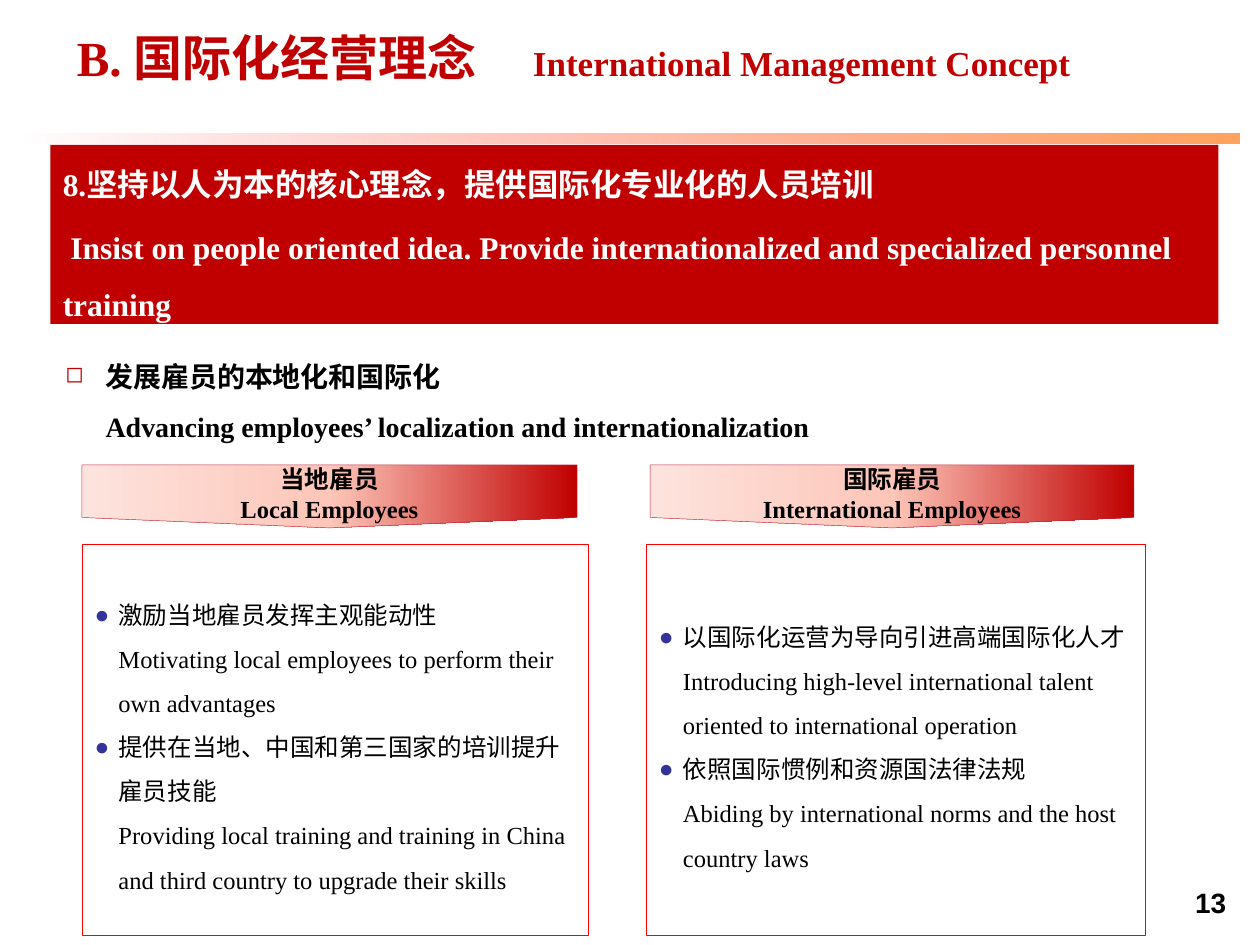
from lxml.etree import SubElement
from pptx import Presentation
from pptx.dml.color import RGBColor
from pptx.enum.shapes import MSO_SHAPE as Shape
from pptx.enum.text import MSO_ANCHOR as Anchor, MSO_AUTO_SIZE as AutoSize, PP_ALIGN as Align
from pptx.oxml.ns import qn
from pptx.util import Inches, Pt

RED = RGBColor(0xC0, 0x00, 0x00)
BORDER_RED = RGBColor(0xFF, 0x00, 0x00)
ARROW_LINE = RGBColor(0xBB, 0x27, 0x40)
PINK = RGBColor(0xFD, 0xC6, 0xB9)
PALE_PINK = RGBColor(0xFD, 0xE3, 0xDD)
ORANGE = RGBColor(0xFF, 0x75, 0x0D)
BULLET_BLUE = RGBColor(0x33, 0x33, 0x99)
WHITE = RGBColor(0xFF, 0xFF, 0xFF)
BLACK = RGBColor(0x00, 0x00, 0x00)
SERIF = "Times New Roman"

TITLE = ("B. 国际化经营理念", "International Management Concept")
BANNER = [
    "8.坚持以人为本的核心理念，提供国际化专业化的人员培训",
    "Insist on people oriented idea. Provide internationalized and specialized personnel training",
]
INTRO = ("发展雇员的本地化和国际化", "Advancing employees’ localization and internationalization")
# Each column: header, (left, width) of arrow and of box, bullets as (Chinese, English)
COLUMNS = [
    (("当地雇员", "Local Employees"), (0.65, 3.93), (0.65, 4.02), [
        ("激励当地雇员发挥主观能动性",
         "Motivating local employees to perform their own advantages"),
        ("提供在当地、中国和第三国家的培训提升雇员技能",
         "Providing local training and training in China and third country to upgrade their skills"),
    ]),
    (("国际雇员", "International Employees"), (5.16, 3.84), (5.13, 3.96), [
        ("以国际化运营为导向引进高端国际化人才",
         "Introducing high-level international talent oriented to international operation"),
        ("依照国际惯例和资源国法律法规",
         "Abiding by international norms and the host country laws"),
    ]),
]
ARROW_TOP, ARROW_HEIGHT = 3.69, 0.5
BOX_TOP, BOX_HEIGHT = 4.32, 3.1


def place(shape, left, top, width, height):
    shape.left, shape.top = Inches(left), Inches(top)
    shape.width, shape.height = Inches(width), Inches(height)


def add_shape(slide, kind, left, top, width, height):
    shape = slide.shapes.add_shape(kind, *map(Inches, (left, top, width, height)))
    shape.shadow.inherit = False
    shape.line.fill.background()
    return shape


def fill_gradient(shape, stops, angle):
    """Fill with (position %, colour, opacity %) stops; angle is clockwise."""
    shape.fill.gradient()
    gradient = shape._element.spPr.find(qn("a:gradFill"))
    stop_list = gradient.find(qn("a:gsLst"))
    for old_stop in list(stop_list):
        stop_list.remove(old_stop)
    for position, color, opacity in stops:
        stop = SubElement(stop_list, qn("a:gs"), pos=str(position * 1000))
        color_element = SubElement(stop, qn("a:srgbClr"), val=str(color))
        if opacity < 100:
            SubElement(color_element, qn("a:alpha"), val=str(opacity * 1000))
    gradient.find(qn("a:lin")).set("ang", str(angle * 60000))


def set_indent(paragraph, margin, first_line, bullet=None, color=None, percent=100):
    properties = paragraph._p.get_or_add_pPr()
    properties.set("marL", str(Inches(margin)))
    properties.set("indent", str(Inches(first_line)))
    if bullet is None:
        SubElement(properties, qn("a:buNone"))
        return
    bullet_color = SubElement(properties, qn("a:buClr"))
    SubElement(bullet_color, qn("a:srgbClr"), val=str(color))
    SubElement(properties, qn("a:buSzPct"), val=str(percent * 1000))
    SubElement(properties, qn("a:buChar"), char=bullet)


def format_paragraph(paragraph, size, color=BLACK, bold=True, name=SERIF,
                     align=Align.LEFT, spacing=1, before=0):
    paragraph.alignment = align
    paragraph.line_spacing = spacing
    paragraph.space_before = Pt(before)
    font = paragraph.font
    font.size, font.bold, font.name = Pt(size), bold, name
    font.color.rgb = color


def write_lines(frame, lines):
    """Write one paragraph per line and return the paragraphs."""
    frame.word_wrap = True
    frame.auto_size = AutoSize.NONE
    frame.text = "\n".join(lines)
    return frame.paragraphs


def write_bilingual_list(frame, pairs, margin, bullet, color, size, bold, percent=100):
    paragraphs = write_lines(frame, [line for pair in pairs for line in pair])
    for index, paragraph in enumerate(paragraphs):
        if index % 2 == 0:
            set_indent(paragraph, margin, -margin, bullet, color, percent)
        else:
            set_indent(paragraph, margin, 0)
        format_paragraph(paragraph, size, bold=bold, spacing=1.5)


def add_text_box(slide, left, top, width, height):
    return slide.shapes.add_textbox(*map(Inches, (left, top, width, height))).text_frame


def add_header_arrow(slide, lines, left, width):
    # The pentagon is turned to point down, so its own width is the visible height.
    center_x, center_y = left + width / 2, ARROW_TOP + ARROW_HEIGHT / 2
    arrow = add_shape(slide, Shape.PENTAGON, center_x - ARROW_HEIGHT / 2,
                      center_y - width / 2, ARROW_HEIGHT, width)
    arrow.rotation = 90
    arrow.adjustments[0] = 0.166
    fill_gradient(arrow, [(0, RED, 100), (50, PINK, 100), (100, PALE_PINK, 100)], 90)
    arrow.line.color.rgb, arrow.line.width = ARROW_LINE, Pt(0.25)
    frame = arrow.text_frame
    for paragraph in write_lines(frame, lines):
        format_paragraph(paragraph, 14, align=Align.CENTER)
    frame.vertical_anchor = Anchor.MIDDLE
    frame.margin_left = frame.margin_right = frame.margin_top = frame.margin_bottom = 0
    frame._txBody.bodyPr.set("vert", "vert270")


def fill_title(title):
    place(title, 0.51, 0.17, 9.16, 0.57)
    paragraph = write_lines(title.text_frame, [TITLE[0]])[0]
    title.text_frame.vertical_anchor = Anchor.MIDDLE
    tabs = SubElement(paragraph._p.get_or_add_pPr(), qn("a:tabLst"))
    SubElement(tabs, qn("a:tab"), pos=str(Inches(3.62)), algn="l")
    format_paragraph(paragraph, 28, RED)
    subtitle = paragraph.add_run()
    subtitle.text = "\t" + TITLE[1]
    subtitle.font.size = Pt(20)


def main():
    presentation = Presentation()
    presentation.slide_width, presentation.slide_height = Inches(10), Inches(7.5)
    slide = presentation.slides.add_slide(presentation.slide_layouts[3])
    for placeholder in list(slide.placeholders):
        if placeholder.placeholder_format.idx > 2:
            placeholder._element.getparent().remove(placeholder._element)

    fill_title(slide.shapes.title)

    rule = add_shape(slide, Shape.RECTANGLE, 0.11, 1.06, 9.73, 0.08)
    fill_gradient(rule, [(0, BORDER_RED, 0), (100, ORANGE, 67)], 0)

    banner = add_shape(slide, Shape.RECTANGLE, 0.4, 1.15, 9.27, 1.42)
    banner.fill.solid()
    banner.fill.fore_color.rgb = RED
    banner.text_frame.vertical_anchor = Anchor.MIDDLE
    for index, paragraph in enumerate(write_lines(banner.text_frame, BANNER)):
        set_indent(paragraph, 0, 0.06 * index)
        format_paragraph(paragraph, 18, WHITE, spacing=1.5, before=4 * index)

    intro = add_text_box(slide, 0.42, 2.67, 8.83, 0.91)
    write_bilingual_list(intro, [INTRO], 0.32, "◻", RED, 16, True, percent=80)

    for index, (header, arrow_span, (left, width), pairs) in enumerate(COLUMNS, start=1):
        add_header_arrow(slide, header, *arrow_span)
        box = slide.placeholders[index]
        place(box, left, BOX_TOP, width, BOX_HEIGHT)
        box.line.color.rgb, box.line.width = BORDER_RED, Pt(0.25)
        box.text_frame.vertical_anchor = Anchor.MIDDLE
        write_bilingual_list(box.text_frame, pairs, 0.19, "●", BULLET_BLUE, 14, False)

    page_number = add_text_box(slide, 7.5, 6.98, 2.33, 0.52)
    format_paragraph(write_lines(page_number, ["13"])[0], 16, name="Arial", align=Align.RIGHT)

    presentation.save("out.pptx")


if __name__ == "__main__":
    main()
